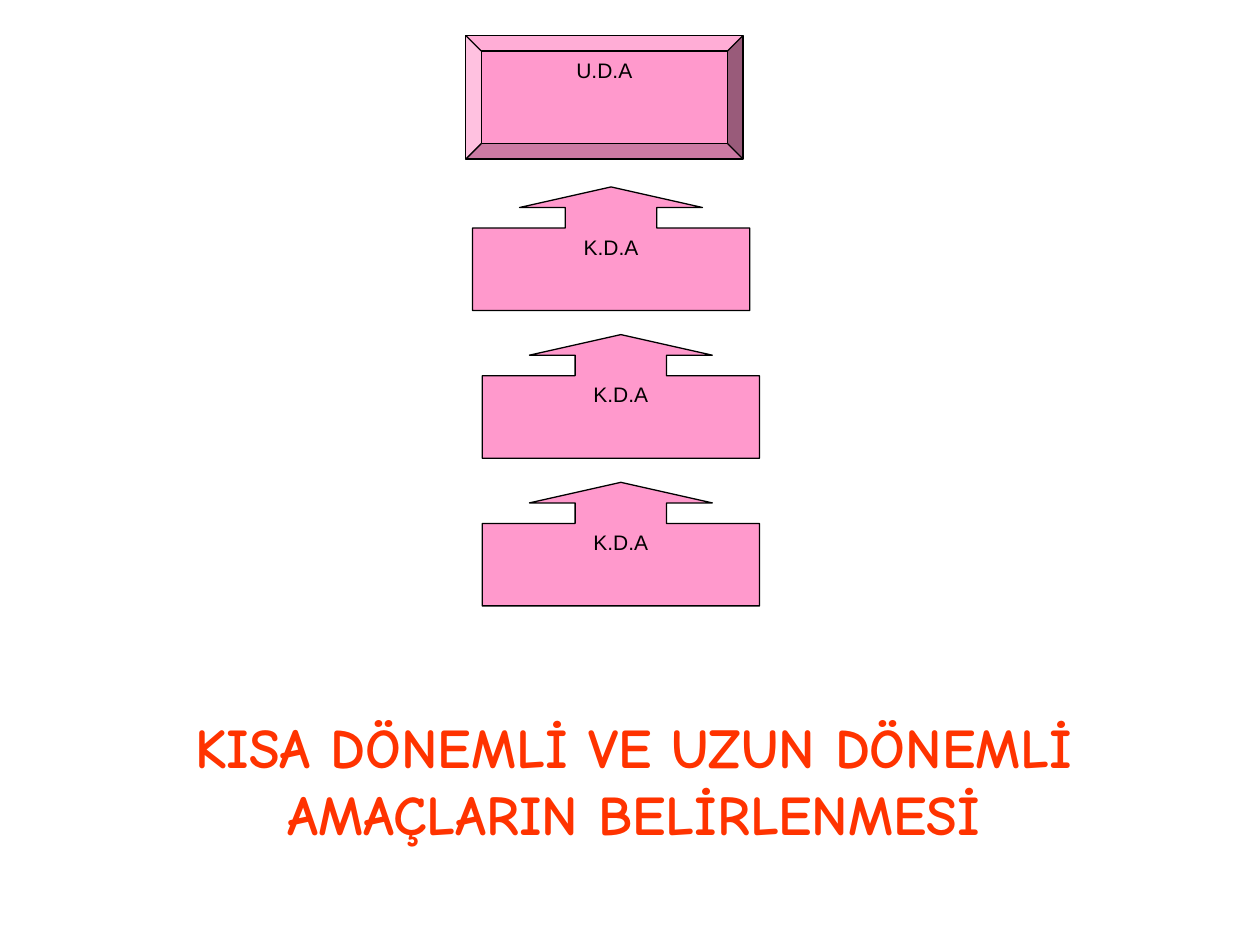
"""Build a slide showing short-term goals leading up to a long-term goal."""
from pptx import Presentation
from pptx.dml.color import RGBColor
from pptx.enum.shapes import MSO_SHAPE
from pptx.enum.text import MSO_ANCHOR, PP_ALIGN
from pptx.util import Pt

COLORS = {"goal": "FF99CC", "ink": "000000", "title": "FF3300"}
GOAL_WIDTH, GOAL_HEIGHT = 158.4, 70.6
FIRST_STEP_TOP, STEP_PITCH = 106.8, 84.4
STEP_LEFTS = (270, 275.6, 275.6)


def color(name):
    return RGBColor.from_string(COLORS[name])


def write_text(shape, text, font_name, size, color_name, anchor, bold=False):
    frame = shape.text_frame
    frame.word_wrap = True
    frame.vertical_anchor = anchor
    paragraph = frame.paragraphs[0]
    paragraph.alignment = PP_ALIGN.CENTER
    run = paragraph.add_run()
    run.text = text
    run.font.name = font_name
    run.font.size = Pt(size)
    run.font.bold = bold
    run.font.color.rgb = color(color_name)


def add_goal(slide, shape_type, left, top, text, adjustments):
    shape = slide.shapes.add_shape(
        shape_type, Pt(left), Pt(top), Pt(GOAL_WIDTH), Pt(GOAL_HEIGHT)
    )
    for index, value in enumerate(adjustments):
        shape.adjustments[index] = value
    shape.shadow.inherit = False
    shape.fill.solid()
    shape.fill.fore_color.rgb = color("goal")
    shape.line.color.rgb = color("ink")
    shape.line.width = Pt(0.75)
    write_text(shape, text, "Arial", 12, "ink", MSO_ANCHOR.TOP)


def add_title(slide, text):
    box = slide.shapes.add_textbox(Pt(56.2), Pt(371.5), Pt(612), Pt(148.3))
    write_text(box, text, "Comic Neue", 32, "title", MSO_ANCHOR.MIDDLE, bold=True)


def main():
    presentation = Presentation()
    presentation.slide_width, presentation.slide_height = Pt(720), Pt(540)
    slide = presentation.slides.add_slide(presentation.slide_layouts[6])
    for index, left in enumerate(STEP_LEFTS):
        top = FIRST_STEP_TOP + index * STEP_PITCH
        add_goal(slide, MSO_SHAPE.UP_ARROW_CALLOUT, left, top, "K.D.A",
                 (0.74, 0.74, 0.167, 0.667))
    add_goal(slide, MSO_SHAPE.BEVEL, 266.2, 20.3, "U.D.A", (0.125,))
    add_title(slide, "KISA DÖNEMLİ VE UZUN DÖNEMLİ AMAÇLARIN BELİRLENMESİ")
    presentation.save("out.pptx")


if __name__ == "__main__":
    main()
